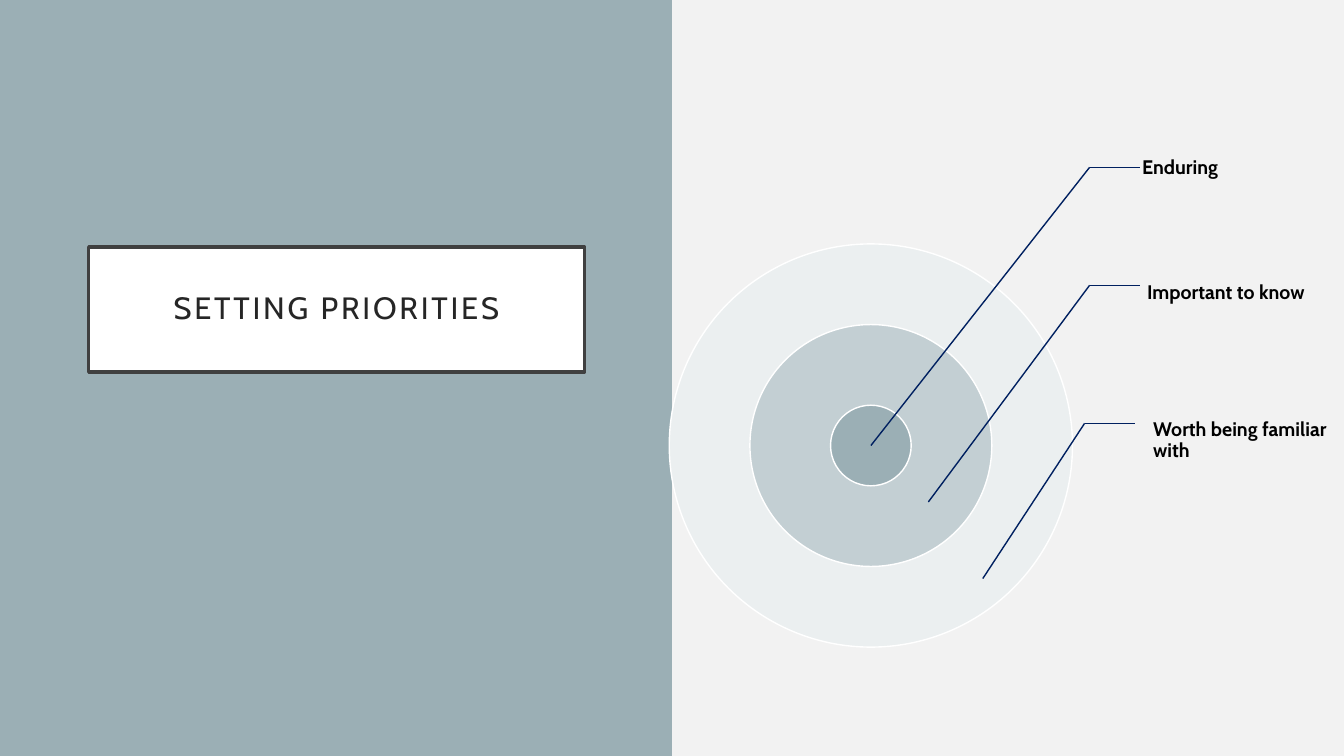
"""Build the slide that ranks priorities as three nested circles."""
from lxml import etree
from pptx import Presentation
from pptx.dml.color import RGBColor
from pptx.enum.shapes import MSO_CONNECTOR, MSO_SHAPE
from pptx.enum.text import MSO_ANCHOR, PP_ALIGN
from pptx.oxml.ns import qn
from pptx.util import Inches, Pt

RECTANGLE, OVAL = MSO_SHAPE.RECTANGLE, MSO_SHAPE.OVAL
STRAIGHT = MSO_CONNECTOR.STRAIGHT
MIDDLE = MSO_ANCHOR.MIDDLE
LEFT, CENTER = PP_ALIGN.LEFT, PP_ALIGN.CENTER

PAPER = RGBColor(0xF2, 0xF2, 0xF2)
SLATE = RGBColor(0x9B, 0xAF, 0xB5)
MIST = RGBColor(0xC3, 0xCF, 0xD3)
PALE = RGBColor(0xEB, 0xEF, 0xF0)
WHITE = RGBColor(0xFF, 0xFF, 0xFF)
BLACK = RGBColor(0x00, 0x00, 0x00)
CHARCOAL = RGBColor(0x40, 0x40, 0x40)
INK = RGBColor(0x26, 0x26, 0x26)
NAVY = RGBColor(0x00, 0x20, 0x60)

FONT = "Cabin"
WIDTH, HEIGHT = Inches(13.333), Inches(7.5)
COLUMNS, ROWS = 40, 22.5
TARGET = (25.92, 13.26)
RINGS = ((12, PALE), (7.2, MIST), (2.4, SLATE))
SHELF = 1.5
CALLOUTS = (
    ("Enduring", (33.75, 3.24, 6.24, 3.51), (0.08, 0.01, 0.01, 0.01),
     (32.43, 4.98), TARGET),
    ("Important to know", (33.81, 7.32, 6, 3.51), (0.11, 0.02, 0.02, 0.25),
     (32.43, 8.49), (27.63, 14.94)),
    ("Worth being familiar with", (33.99, 11.64, 6, 3.57), (0.11, 0.02, 0.02, 0.22),
     (32.28, 12.6), (29.25, 17.22)),
)


def across(columns):
    """Turn grid columns into a length."""
    return round(WIDTH * columns / COLUMNS)


def down(rows):
    """Turn grid rows into a length."""
    return round(HEIGHT * rows / ROWS)


def place(area):
    """Turn a grid area into left, top, width and height."""
    left, top, width, height = area
    return across(left), down(top), across(width), down(height)


def add_block(page, kind, area, fill, line=None, weight=1):
    """Draw a filled shape, outlined when a line colour is given."""
    block = page.shapes.add_shape(kind, *place(area))
    block.shadow.inherit = False
    block.fill.solid()
    block.fill.fore_color.rgb = fill
    if line is None:
        block.line.fill.background()
    else:
        block.line.color.rgb = line
        block.line.width = Pt(weight)
    return block


def write(box, text, *, size, color, bold=False, align=LEFT, insets, tracking=0):
    """Write one formatted paragraph into a box."""
    frame = box.text_frame
    frame.word_wrap = True
    frame.vertical_anchor = MIDDLE
    (frame.margin_left, frame.margin_top,
     frame.margin_right, frame.margin_bottom) = map(Inches, insets)
    para = frame.paragraphs[0]
    para.alignment = align
    para.line_spacing = 0.9
    span = para.add_run()
    span.text = text
    span.font.name = FONT
    span.font.size = Pt(size)
    span.font.bold = bold
    span.font.color.rgb = color
    if tracking:
        span.font._element.set("spc", str(tracking * 100))


def add_line(page, start, end):
    """Draw a thin navy line between two grid points."""
    line = page.shapes.add_connector(
        STRAIGHT, across(start[0]), down(start[1]), across(end[0]), down(end[1]))
    line.line.color.rgb = NAVY
    line.line.width = Pt(1)
    etree.SubElement(line._element.spPr, qn("a:effectLst"))


def add_ring(page, diameter, fill):
    """Draw a circle centred on the target."""
    x, y = TARGET
    area = (x - diameter / 2, y - diameter / 2, diameter, diameter)
    add_block(page, OVAL, area, fill, WHITE)


def add_callout(page, text, area, insets, elbow, tip):
    """Draw a label with its bent leader line."""
    label = page.shapes.add_textbox(*place(area))
    write(label, text, size=14, color=BLACK, bold=True, insets=insets)
    add_line(page, elbow, (elbow[0] + SHELF, elbow[1]))
    add_line(page, elbow, tip)


def main():
    """Build and save the deck."""
    deck = Presentation()
    deck.slide_width, deck.slide_height = WIDTH, HEIGHT
    page = deck.slides.add_slide(deck.slide_layouts[6])
    page.background.fill.solid()
    page.background.fill.fore_color.rgb = PAPER

    add_block(page, RECTANGLE, (0, 0, COLUMNS / 2, ROWS), SLATE)
    title = add_block(page, RECTANGLE, (2.64, 7.35, 14.76, 3.72), WHITE, CHARCOAL, 2.5)
    write(title, "SETTING PRIORITIES", size=22, color=INK, align=CENTER,
          insets=(0.2, 0.2, 0.2, 0.2), tracking=2)
    for diameter, fill in RINGS:
        add_ring(page, diameter, fill)
    for callout in CALLOUTS:
        add_callout(page, *callout)
    deck.save("out.pptx")


if __name__ == "__main__":
    main()
